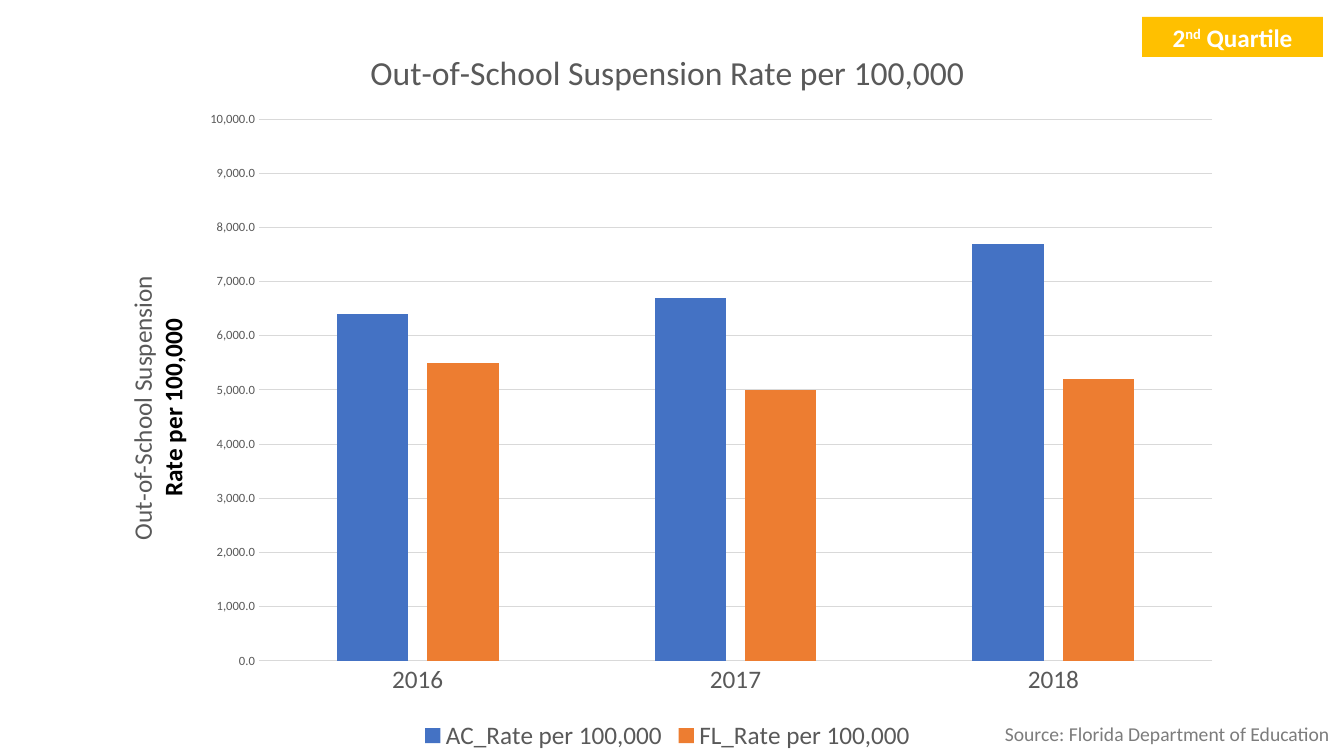
import lxml.etree
import pptx
import pptx.chart.data
import pptx.dml.color
import pptx.enum.chart
import pptx.enum.shapes
import pptx.enum.text
import pptx.oxml.ns
import pptx.util

PX = 914400 / 100.8
FONT = "Calibri"
COLORS = {
    "white": "FFFFFF",
    "black": "000000",
    "text": "595959",
    "source": "7C7C7C",
    "grid": "D9D9D9",
    "badge": "FFC000",
    "county": "4472C4",
    "state": "ED7D31",
}
YEARS = ["2016", "2017", "2018"]
SERIES = [
    ("AC_Rate per 100,000", (6400, 6700, 7700), "county"),
    ("FL_Rate per 100,000", (5500, 5000, 5200), "state"),
]


def box(left, top, width, height):
    return [pptx.util.Emu(round(length * PX)) for length in (left, top, width, height)]


def rgb(name):
    return pptx.dml.color.RGBColor.from_string(COLORS[name])


def set_attributes(target, values):
    for name, value in values.items():
        setattr(target, name, value)


def format_font(font, size, color, bold=False):
    set_attributes(font, {"name": FONT, "size": pptx.util.Pt(size), "bold": bold})
    font.color.rgb = rgb(color)


def add_run(paragraph, text, size, color, bold=False):
    run = paragraph.add_run()
    run.text = text
    format_font(run.font, size, color, bold)
    return run


def format_line(line, color):
    line.color.rgb = rgb(color)
    line.width = pptx.util.Pt(0.75)


def set_layout(element, **fractions):
    """Place a chart part by fractions of the chart's size."""
    qn = pptx.oxml.ns.qn
    layout = element.find(qn("c:layout"))
    if layout is None:
        layout = lxml.etree.Element(qn("c:layout"))
        element.insert(0 if element.find(qn("c:tx")) is None else 1, layout)
    manual = lxml.etree.SubElement(layout, qn("c:manualLayout"))
    settings = {"xMode": "edge", "yMode": "edge", **fractions}
    if "w" in fractions:
        settings = {"layoutTarget": "inner", **settings}
    for name, value in settings.items():
        lxml.etree.SubElement(manual, qn(f"c:{name}")).set("val", str(value))


def format_axis(axis, size):
    set_attributes(axis, {
        "major_tick_mark": pptx.enum.chart.XL_TICK_MARK.NONE,
        "minor_tick_mark": pptx.enum.chart.XL_TICK_MARK.NONE,
    })
    format_font(axis.tick_labels.font, size, "text")


def add_value_axis_title(axis):
    title = axis.axis_title
    frame = title.text_frame
    add_run(frame.paragraphs[0], "Out-of-School Suspension", 18, "text")
    add_run(frame.add_paragraph(), "Rate per 100,000", 18, "black", bold=True)
    for paragraph in frame.paragraphs:
        paragraph.alignment = pptx.enum.text.PP_ALIGN.CENTER
    body = title.element.find(".//" + pptx.oxml.ns.qn("a:bodyPr"))
    body.set("rot", "-5400000")
    body.set("vert", "horz")
    set_layout(title.element, x=0.02, y=0.34)


def add_suspension_chart(slide):
    data = pptx.chart.data.CategoryChartData(number_format="#,##0.0")
    data.categories = YEARS
    for name, values, _ in SERIES:
        data.add_series(name, values)
    chart = slide.shapes.add_chart(
        pptx.enum.chart.XL_CHART_TYPE.COLUMN_CLUSTERED, *box(100, 24, 1135, 732), data
    ).chart
    format_font(chart.font, 10, "black")
    add_run(chart.chart_title.text_frame.paragraphs[0],
            "Out-of-School Suspension Rate per 100,000", 24, "text")

    plot = chart.plots[0]
    set_attributes(plot, {"gap_width": 219, "overlap": -27, "vary_by_categories": False})
    for series, (_, _, color) in zip(plot.series, SERIES):
        series.format.fill.solid()
        series.format.fill.fore_color.rgb = rgb(color)

    format_axis(chart.category_axis, 18)
    format_line(chart.category_axis.format.line, "grid")
    value_axis = chart.value_axis
    format_axis(value_axis, 9)
    set_attributes(value_axis, {"minimum_scale": 0, "maximum_scale": 10000, "major_unit": 1000})
    set_attributes(value_axis.tick_labels,
                   {"number_format": "#,##0.0", "number_format_is_linked": False})
    value_axis.format.line.fill.background()
    format_line(value_axis.major_gridlines.format.line, "grid")
    add_value_axis_title(value_axis)

    chart.has_legend = True
    set_attributes(chart.legend, {
        "position": pptx.enum.chart.XL_LEGEND_POSITION.BOTTOM,
        "include_in_layout": False,
    })
    format_font(chart.legend.font, 18, "text")
    plot_area = chart.element.find(".//" + pptx.oxml.ns.qn("c:plotArea"))
    set_layout(plot_area, x=0.14, y=0.13, w=0.84, h=0.74)


def add_source(slide):
    frame = slide.shapes.add_textbox(*box(995, 717, 364, 57)).text_frame
    frame.word_wrap = True
    add_run(frame.paragraphs[0], "Source: Florida Department of Education", 14, "source")


def add_quartile_badge(slide):
    badge = slide.shapes.add_shape(
        pptx.enum.shapes.MSO_SHAPE.RECTANGLE, *box(1142, 17, 181, 40))
    badge.shadow.inherit = False
    badge.fill.solid()
    badge.fill.fore_color.rgb = rgb("badge")
    badge.line.fill.background()
    badge.text_frame.word_wrap = True
    paragraph = badge.text_frame.paragraphs[0]
    paragraph.alignment = pptx.enum.text.PP_ALIGN.CENTER
    _, ordinal, _ = [add_run(paragraph, text, 18, "white", bold=True)
                     for text in ("2", "nd", " Quartile")]
    ordinal.font._element.set("baseline", "30000")


def main():
    presentation = pptx.Presentation()
    _, _, width, height = box(0, 0, 1344, 756)
    set_attributes(presentation, {"slide_width": width, "slide_height": height})
    slide = presentation.slides.add_slide(presentation.slide_layouts.get_by_name("Blank"))
    add_source(slide)
    add_suspension_chart(slide)
    add_quartile_badge(slide)
    presentation.save("out.pptx")


if __name__ == "__main__":
    main()
